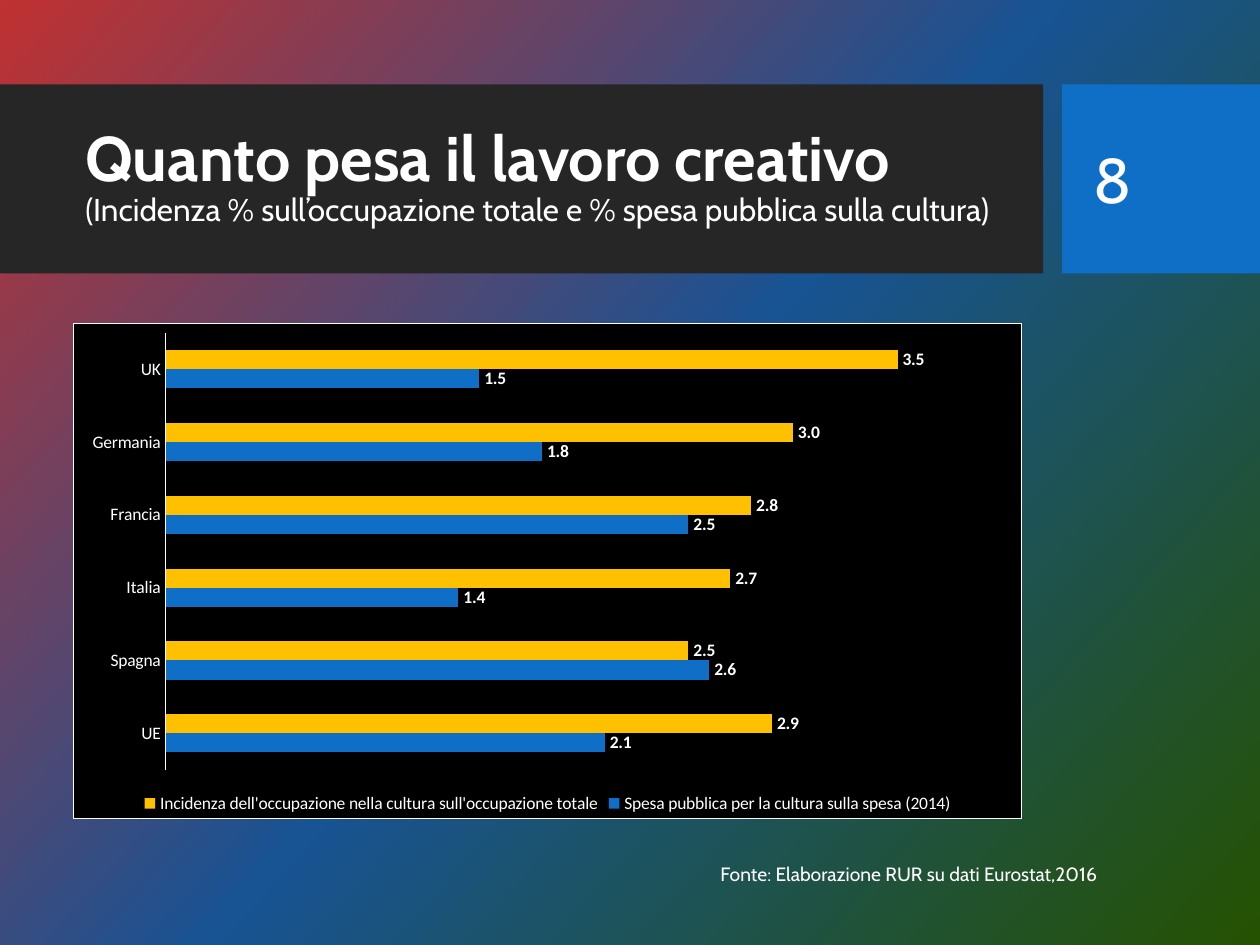
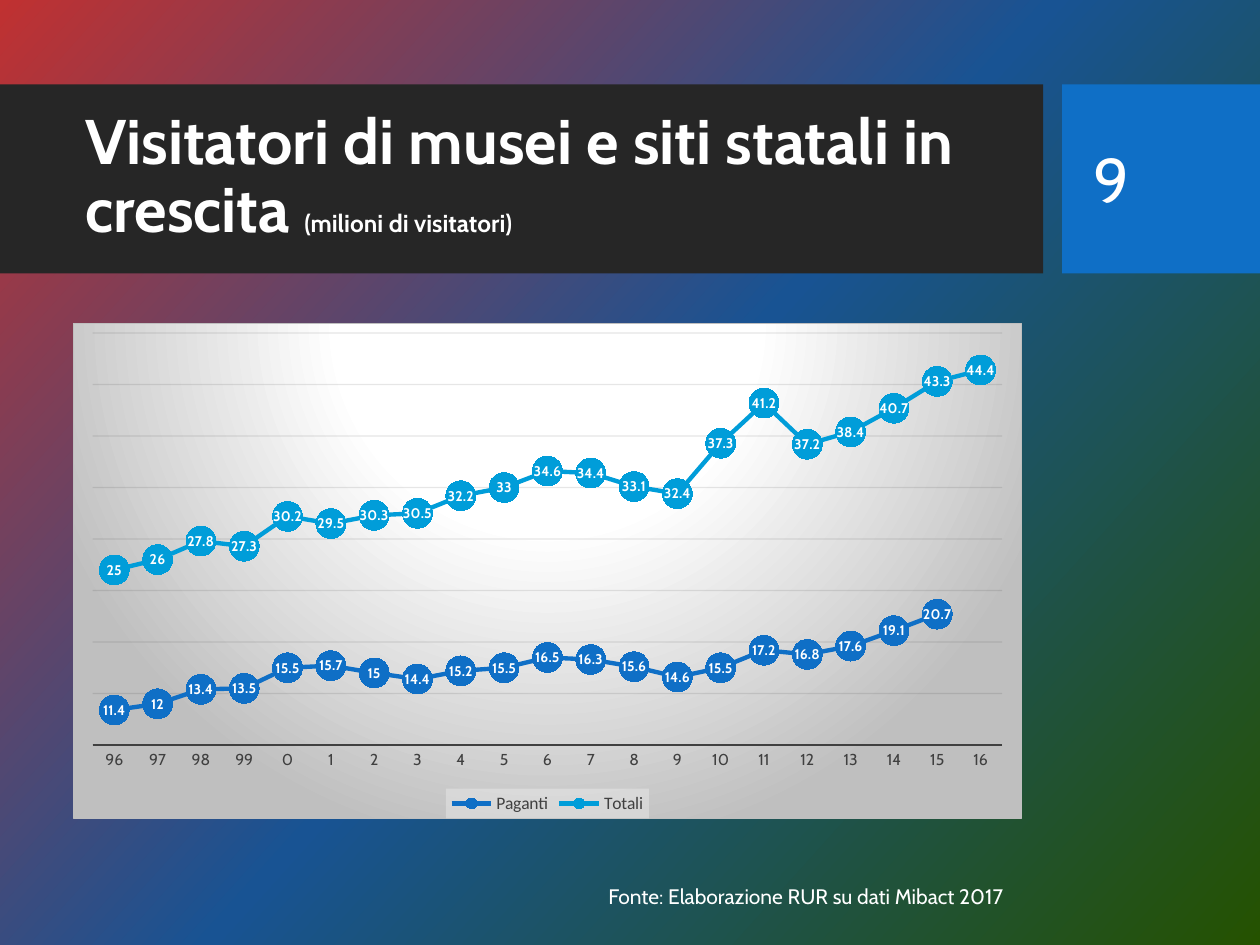
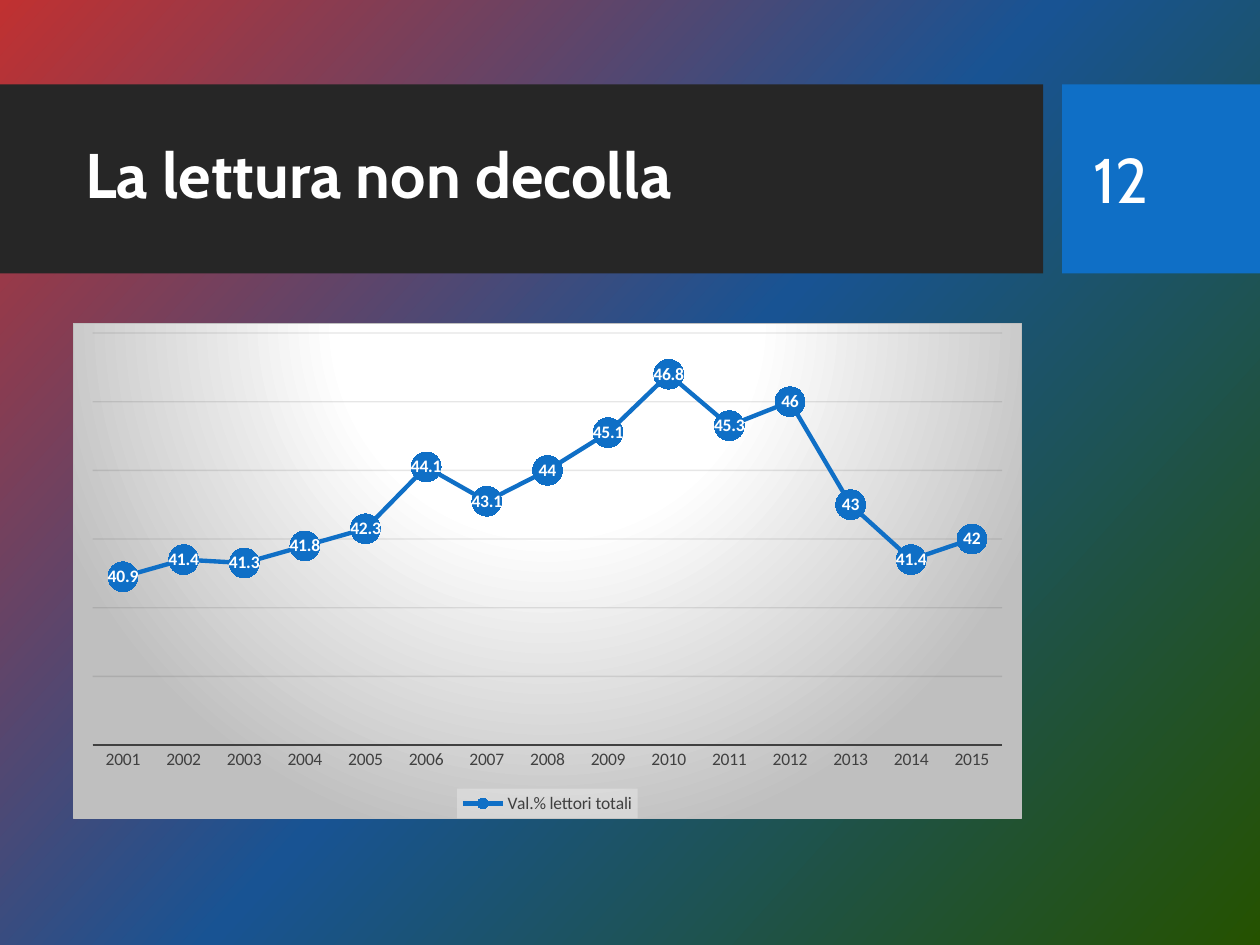
"""Build three slides on cultural work, museum visitors and reading, each with a chart."""
from dataclasses import dataclass
from typing import Any, Optional

from lxml import etree
from pptx import Presentation
from pptx.chart.chart import Chart
from pptx.chart.data import CategoryChartData
from pptx.dml.color import RGBColor
from pptx.enum.chart import (XL_CHART_TYPE, XL_LABEL_POSITION, XL_LEGEND_POSITION,
                             XL_MARKER_STYLE, XL_TICK_MARK)
from pptx.enum.shapes import MSO_SHAPE
from pptx.enum.text import MSO_ANCHOR
from pptx.oxml import parse_xml
from pptx.oxml.ns import nsdecls, qn
from pptx.slide import Slide
from pptx.util import Inches, Pt

BAR, LINE = XL_CHART_TYPE.BAR_CLUSTERED, XL_CHART_TYPE.LINE_MARKERS
CENTER, OUTSIDE = XL_LABEL_POSITION.CENTER, XL_LABEL_POSITION.OUTSIDE_END
BOTTOM = XL_LEGEND_POSITION.BOTTOM
CIRCLE = XL_MARKER_STYLE.CIRCLE
NO_TICK = XL_TICK_MARK.NONE
RECT = MSO_SHAPE.RECTANGLE
TOP, MIDDLE = MSO_ANCHOR.TOP, MSO_ANCHOR.MIDDLE

COLORS = {
    "red": "C03131", "navy": "185393", "green": "255200", "band": "262626",
    "blue": "0F6FC6", "cyan": "009DD9", "yellow": "FFC000", "white": "FFFFFF",
    "black": "000000", "grid": "0D0D0D", "ink": "404040", "silver": "BFBFBF",
    "legend": "F2F2F2",
}
HEAD_FONT, LABEL_FONT = "Cabin", "Calibri"
BAND_TOP, BAND_HEIGHT = 0.67, 1.5
RADIAL = ('<a:path path="circle"><a:fillToRect l="50000" t="-80000" r="50000" '
          'b="180000"/></a:path>')
DIAGONAL = '<a:lin ang="2520000" scaled="0"/>'


@dataclass
class Box:
    left: float
    top: float
    width: float
    height: float

    def emu(self) -> tuple[int, ...]:
        return tuple(Inches(v) for v in (self.left, self.top, self.width, self.height))


@dataclass
class Run:
    text: str
    size: float
    bold: bool = False
    break_before: bool = False


@dataclass
class Series:
    name: str
    values: list[Optional[float]]
    color: str


@dataclass
class Panel:
    kind: int
    cats: list[str]
    series: list[Series]
    low: float
    high: float
    step: float
    cat_size: float = 10
    cat_font: str = LABEL_FONT
    label_size: float = 10
    label_font: str = LABEL_FONT


@dataclass
class Page:
    number: str
    title: list[Run]
    panel: Panel
    source: Optional[Run] = None
    source_box: Optional[Box] = None


TITLE_BOX = Box(0.58, 0.82, 7.54, 1.18)
NUMBER_BOX = Box(8.58, 0.82, 1.27, 1.19)
CHART_BOX = Box(0.58, 2.56, 7.53, 3.94)
BANDS = [(Box(0, BAND_TOP, 8.28, BAND_HEIGHT), "band"),
         (Box(8.43, BAND_TOP, 1.57, BAND_HEIGHT), "blue")]

PAGES = [
    Page("8",
         [Run("Quanto pesa il lavoro creativo", 36, True),
          Run("(Incidenza % sull’occupazione totale e % spesa pubblica sulla cultura)",
              18, break_before=True)],
         Panel(BAR, ["UE", "Spagna", "Italia", "Francia", "Germania", "UK"],
               [Series("Spesa pubblica per la cultura sulla spesa (2014)",
                       [2.1, 2.6, 1.4, 2.5, 1.8, 1.5], "blue"),
                Series("Incidenza dell'occupazione nella cultura sull'occupazione totale",
                       [2.9, 2.5, 2.7, 2.8, 3, 3.5], "yellow")],
               0, 4, 0.5),
         Run("Fonte: Elaborazione RUR su dati Eurostat,2016", 11),
         Box(5.62, 6.79, 4.2, 0.29)),
    Page("9",
         [Run("Visitatori di musei e siti statali in crescita ", 36, True),
          Run("(milioni di visitatori)", 14, True)],
         Panel(LINE, [str(year % 100) for year in range(1996, 2017)],
               [Series("Paganti",
                       [11.4, 12, 13.4, 13.5, 15.5, 15.7, 15, 14.4, 15.2, 15.5, 16.5,
                        16.3, 15.6, 14.6, 15.5, 17.2, 16.8, 17.6, 19.1, 20.7, None],
                       "blue"),
                Series("Totali",
                       [25, 26, 27.8, 27.3, 30.2, 29.5, 30.3, 30.5, 32.2, 33, 34.6,
                        34.4, 33.1, 32.4, 37.3, 41.2, 37.2, 38.4, 40.7, 43.3, 44.4],
                       "cyan")],
               8, 48, 5, 9, HEAD_FONT, 8, HEAD_FONT),
         Run("Fonte: Elaborazione RUR su dati Mibact 2017", 12),
         Box(4.73, 6.96, 3.93, 0.3)),
    Page("12",
         [Run("La lettura non decolla", 36, True)],
         Panel(LINE, [str(year) for year in range(2001, 2016)],
               [Series("Val.% lettori totali",
                       [40.9, 41.4, 41.3, 41.8, 42.3, 44.1, 43.1, 44, 45.1, 46.8,
                        45.3, 46, 43, 41.4, 42], "blue")],
               36, 48, 2)),
]


def rgb(name: str) -> RGBColor:
    return RGBColor.from_string(COLORS[name])


def set_attrs(obj: Any, values: dict[str, Any]) -> None:
    for key, value in values.items():
        setattr(obj, key, value)


def set_font(font: Any, name: str, size: float, color: str, bold: bool = False) -> None:
    set_attrs(font, {"name": name, "size": Pt(size), "bold": bold})
    font.color.rgb = rgb(color)


def set_line(line: Any, color: str, width: float) -> None:
    line.color.rgb = rgb(color)
    line.width = Pt(width)


def solid_xml(color: str, alpha: int = 100) -> str:
    return (f'<a:solidFill><a:srgbClr val="{COLORS[color]}">'
            f'<a:alpha val="{alpha * 1000}"/></a:srgbClr></a:solidFill>')


def gradient_xml(stops: list[tuple[int, str]], direction: str) -> str:
    marks = "".join(f'<a:gs pos="{pos * 1000}"><a:srgbClr val="{COLORS[color]}"/></a:gs>'
                    for pos, color in stops)
    return (f'<a:gradFill {nsdecls("a")} rotWithShape="1"><a:gsLst>{marks}</a:gsLst>'
            f'{direction}</a:gradFill>')


def set_area(element: Any, fill: str, border: Optional[str] = None) -> None:
    line = f'<a:ln w="9525">{solid_xml(border)}</a:ln>' if border else ""
    sp_pr = parse_xml(f'<c:spPr {nsdecls("c", "a")}>{fill}{line}</c:spPr>')
    element.find(qn("c:txPr")).addprevious(sp_pr)


def set_background(master: Any) -> None:
    master.background.fill.solid()
    bg = next(master.element.iter(qn("p:bgPr")))
    stops = [(0, "red"), (50, "navy"), (100, "green")]
    bg.replace(bg[0], parse_xml(gradient_xml(stops, DIAGONAL)))


def add_band(s: Slide, box: Box, color: str) -> None:
    sp = s.shapes.add_shape(RECT, *box.emu())
    sp.shadow.inherit = False
    sp.fill.solid()
    sp.fill.fore_color.rgb = rgb(color)
    sp.line.fill.background()


def add_text(s: Slide, box: Box, runs: list[Run], anchor: int = TOP,
             spacing: float = 1.0) -> None:
    tf = s.shapes.add_textbox(*box.emu()).text_frame
    set_attrs(tf, {"word_wrap": True, "vertical_anchor": anchor})
    p = tf.paragraphs[0]
    p.line_spacing = spacing
    for run in runs:
        if run.break_before:
            p.add_line_break()
        r = p.add_run()
        r.text = run.text
        set_font(r.font, HEAD_FONT, run.size, "white", run.bold)


def style_axes(chart: Chart, panel: Panel, ink: str) -> None:
    is_bar = panel.kind == BAR
    cat, val = chart.category_axis, chart.value_axis
    set_attrs(cat, {"major_tick_mark": NO_TICK, "minor_tick_mark": NO_TICK,
                    "has_major_gridlines": False})
    set_font(cat.tick_labels.font, panel.cat_font, panel.cat_size, ink)
    set_line(cat.format.line, ink, 0.75 if is_bar else 1.5)
    set_attrs(val, {"visible": False, "minimum_scale": panel.low,
                    "maximum_scale": panel.high, "major_unit": panel.step,
                    "has_major_gridlines": not is_bar})
    if not is_bar:
        set_line(val.major_gridlines.format.line, "grid", 0.75)
        color = next(val._element.iter(qn("a:srgbClr")))
        etree.SubElement(color, qn("a:alpha"), val="10000")


def style_series(chart: Chart, panel: Panel) -> None:
    is_bar = panel.kind == BAR
    for item, ser in zip(panel.series, chart.plots[0].series):
        if is_bar:
            fill = ser.format.fill
        else:
            ser.smooth = False
            set_line(ser.format.line, item.color, 2.5)
            set_attrs(ser.marker, {"style": CIRCLE, "size": 17})
            set_line(ser.marker.format.line, item.color, 0.75)
            fill = ser.marker.format.fill
        fill.solid()
        fill.fore_color.rgb = rgb(item.color)
        labels = ser.data_labels
        set_attrs(labels, {"show_value": True, "position": OUTSIDE if is_bar else CENTER,
                           "number_format": "0.0" if is_bar else "General",
                           "number_format_is_linked": False})
        set_font(labels.font, panel.label_font, panel.label_size, "white", True)


def add_panel(s: Slide, panel: Panel) -> None:
    is_bar = panel.kind == BAR
    ink = "white" if is_bar else "ink"
    data = CategoryChartData()
    data.categories = panel.cats
    for item in panel.series:
        data.add_series(item.name, item.values)
    chart = s.shapes.add_chart(panel.kind, *CHART_BOX.emu(), data).chart
    set_attrs(chart, {"has_title": False, "has_legend": True})
    set_font(chart.font, HEAD_FONT, 10, "white")
    set_attrs(chart.legend, {"position": BOTTOM, "include_in_layout": False})
    set_font(chart.legend.font, LABEL_FONT, 10, ink)
    chart.plots[0].vary_by_categories = False
    if is_bar:
        set_attrs(chart.plots[0], {"gap_width": 182, "overlap": 0})
        set_area(chart._chartSpace, solid_xml("black"), "white")
    else:
        stops = [(0, "white"), (39, "white"), (100, "silver")]
        set_area(chart._chartSpace, gradient_xml(stops, RADIAL), "silver")
        set_area(chart.legend._element, solid_xml("legend", 39))
    style_axes(chart, panel, ink)
    style_series(chart, panel)


def add_page(prs: Any, page: Page) -> None:
    s = prs.slides.add_slide(prs.slide_layouts[6])
    for box, color in BANDS:
        add_band(s, box, color)
    add_text(s, TITLE_BOX, page.title, MIDDLE, 0.9)
    add_panel(s, page.panel)
    if page.source and page.source_box:
        add_text(s, page.source_box, [page.source])
    add_text(s, NUMBER_BOX, [Run(page.number, 36)], MIDDLE)


def main() -> None:
    prs = Presentation()
    set_attrs(prs, {"slide_width": Inches(10), "slide_height": Inches(7.5)})
    set_background(prs.slide_master)
    for page in PAGES:
        add_page(prs, page)
    prs.save("out.pptx")


if __name__ == "__main__":
    main()
